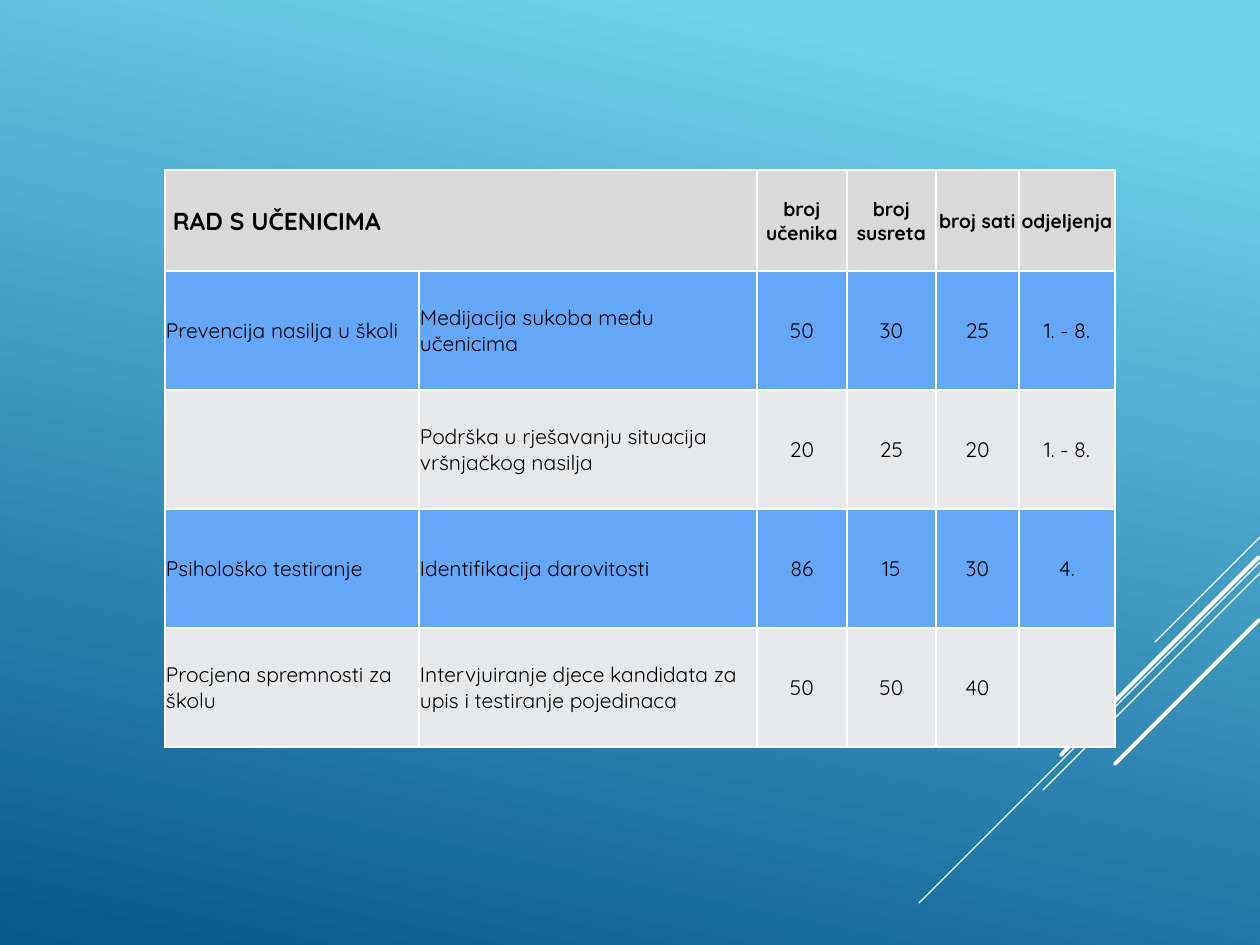
from dataclasses import dataclass

from lxml import etree
from pptx import Presentation
from pptx.dml.color import RGBColor
from pptx.enum.shapes import MSO_CONNECTOR
from pptx.enum.text import MSO_ANCHOR, PP_ALIGN
from pptx.oxml.ns import qn
from pptx.util import Pt

STRAIGHT = MSO_CONNECTOR.STRAIGHT
MIDDLE = MSO_ANCHOR.MIDDLE
LEFT, CENTER = PP_ALIGN.LEFT, PP_ALIGN.CENTER
EMU_PER_PX = 914400 / 126


@dataclass(frozen=True)
class Theme:
    """Hold the colours, font and sizes of the slide."""

    sky: str = "6ED2EB"
    deep: str = "06588E"
    white: str = "FFFFFF"
    ink: str = "000000"
    header: str = "D9D9D9"
    bands: tuple = ("64A7F7", "E7E8EA")
    font: str = "Quicksand"
    title_size: int = 14
    label_size: int = 11
    body_size: int = 12
    border: int = 1
    thin: float = 0.75
    thick: float = 2.25


THEME = Theme()

HEADERS = [" RAD S UČENICIMA", "", "broj učenika", "broj susreta", "broj sati", "odjeljenja"]
ACTIVITIES = [
    ["Prevencija nasilja u školi", "Medijacija sukoba među učenicima", "50", "30", "25", "1. - 8."],
    ["", "Podrška u rješavanju situacija vršnjačkog nasilja", "20", "25", "20", "1. - 8."],
    ["Psihološko testiranje", "Identifikacija darovitosti", "86", "15", "30", "4."],
    ["Procjena spremnosti za školu", "Intervjuiranje djece kandidata za upis i testiranje pojedinaca",
     "50", "50", "40", ""],
]
TEXT_COLUMNS = 2
COLUMN_WIDTHS = [254, 338, 90, 89, 83, 96]
HEADER_HEIGHT, ROW_HEIGHT = 101, 119
TABLE_LEFT, TABLE_TOP = 165, 170

# right end x, right end y, horizontal and vertical reach, weight
DIAGONALS = [
    (1260, 537, 105, THEME.thin),
    (1260, 562, 341, THEME.thin),
    (1260, 573, 217, THEME.thin),
    (1259, 557, 198, THEME.thick),
    (1259, 620, 144, THEME.thick),
]


def px(length):
    """Turn pixels into EMU."""
    return round(length * EMU_PER_PX)


def paint_background(slide):
    """Fill the background with the blue gradient."""
    fill = slide.background.fill
    fill.gradient()
    fill.gradient_angle = 360 - 102
    for stop, position, colour in zip(fill.gradient_stops, (0.1, 1), (THEME.sky, THEME.deep)):
        stop.position = position
        stop.color.rgb = RGBColor.from_string(colour)


def add_diagonal(slide, right, top, reach, weight):
    """Draw a white line falling to the left at 45 degrees."""
    diagonal = slide.shapes.add_connector(
        STRAIGHT, px(right), px(top), px(right - reach), px(top + reach))
    diagonal.line.color.rgb = RGBColor.from_string(THEME.white)
    diagonal.line.width = Pt(weight)
    properties = diagonal.element.spPr
    properties.find(qn("a:ln")).set("cap", "rnd")
    etree.SubElement(properties, qn("a:effectLst"))


def write(cell, text, size=THEME.body_size, bold=False, align=LEFT):
    """Write formatted text into a cell."""
    paragraph = cell.text_frame.paragraphs[0]
    paragraph.alignment = align
    paragraph.font.size = Pt(size)
    if text:
        run = paragraph.add_run()
        run.text = text
        run.font.name = THEME.font
        run.font.size = Pt(size)
        run.font.bold = bold
        run.font.color.rgb = RGBColor.from_string(THEME.ink)


def style_cell(cell, colour):
    """Set the margins, borders and fill of a cell."""
    cell.vertical_anchor = MIDDLE
    cell.margin_left = cell.margin_right = cell.margin_top = px(1)
    cell.margin_bottom = 0
    properties = cell._tc.get_or_add_tcPr()
    for side in ("a:lnL", "a:lnR", "a:lnT", "a:lnB"):
        border = etree.SubElement(properties, qn(side), w=str(Pt(THEME.border)))
        solid = etree.SubElement(border, qn("a:solidFill"))
        etree.SubElement(solid, qn("a:srgbClr"), val=THEME.white)
    cell.fill.solid()
    cell.fill.fore_color.rgb = RGBColor.from_string(colour)


def add_activity_table(slide):
    """Add the table of work with pupils."""
    heights = [HEADER_HEIGHT] + [ROW_HEIGHT] * len(ACTIVITIES)
    table = slide.shapes.add_table(
        len(heights), len(COLUMN_WIDTHS), px(TABLE_LEFT), px(TABLE_TOP),
        px(sum(COLUMN_WIDTHS)), px(sum(heights))).table
    for column, width in zip(table.columns, COLUMN_WIDTHS):
        column.width = px(width)
    for row, height in zip(table.rows, heights):
        row.height = px(height)
    for row_index, texts in enumerate([HEADERS] + ACTIVITIES):
        is_header = row_index == 0
        colour = THEME.header if is_header else THEME.bands[(row_index - 1) % 2]
        for column_index, text in enumerate(texts):
            is_text = column_index < TEXT_COLUMNS
            header_size = THEME.title_size if is_text else THEME.label_size
            cell = table.cell(row_index, column_index)
            style_cell(cell, colour)
            write(cell, text, size=header_size if is_header else THEME.body_size,
                  bold=is_header, align=LEFT if is_text else CENTER)
    table.cell(0, 0).merge(table.cell(0, TEXT_COLUMNS - 1))


def main():
    """Build and save the slide."""
    presentation = Presentation()
    presentation.slide_width, presentation.slide_height = px(1260), px(945)
    slide = presentation.slides.add_slide(presentation.slide_layouts[6])
    paint_background(slide)
    for diagonal in DIAGONALS:
        add_diagonal(slide, *diagonal)
    add_activity_table(slide)
    presentation.save("out.pptx")


if __name__ == "__main__":
    main()
